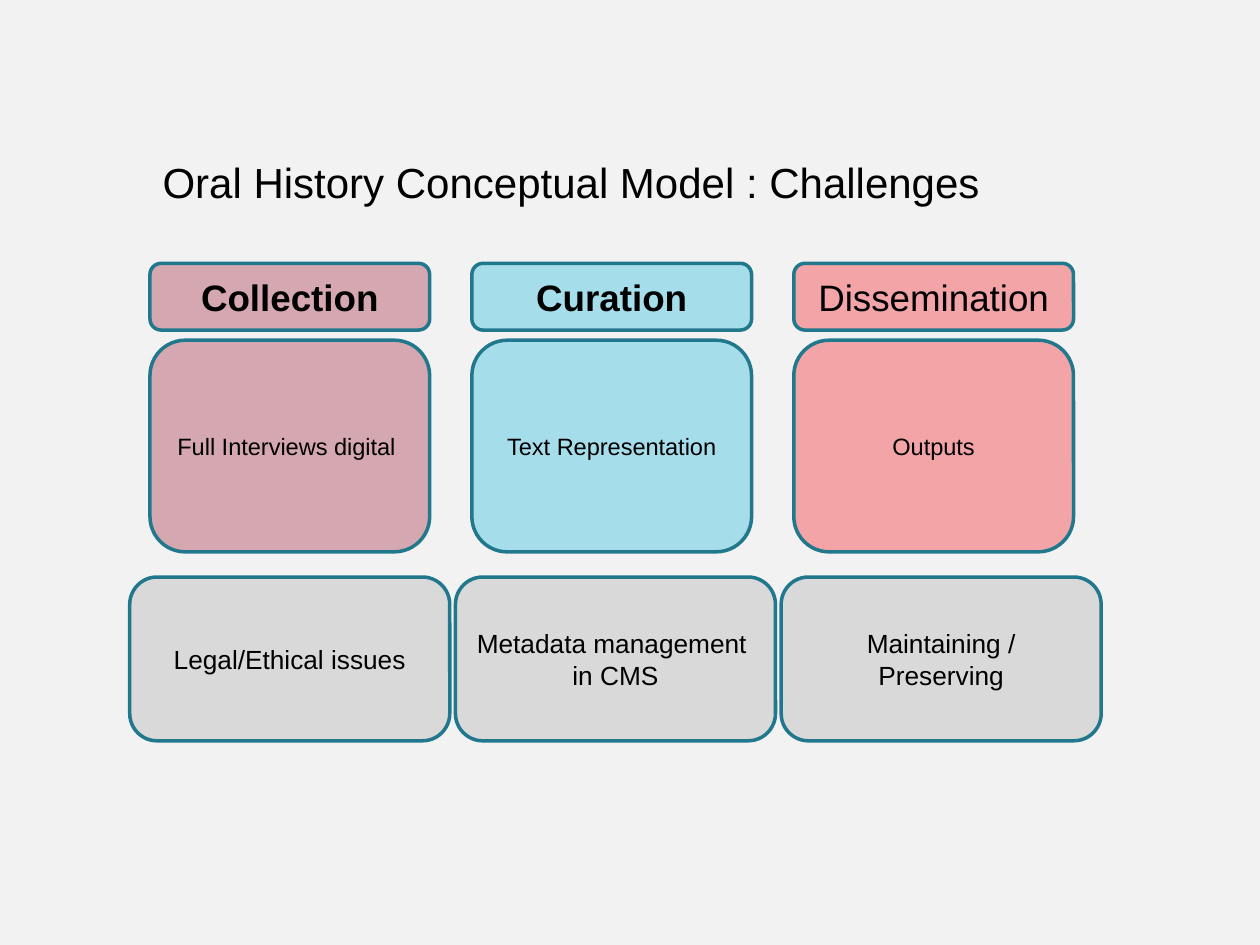
from dataclasses import dataclass

from pptx import Presentation, util as u
from pptx.dml.color import RGBColor
from pptx.enum import shapes, text


@dataclass(frozen=True)
class Theme:
    font: str = "Arial"
    background: str = "F2F2F2"
    ink: str = "000000"
    outline: str = "21788D"
    collection: str = "D5A7B1"
    curation: str = "A6DDEA"
    dissemination: str = "F2A4A7"
    challenge: str = "D9D9D9"
    title_size: float = 24
    heading_size: float = 21
    stage_size: float = 13.5
    challenge_size: float = 15
    line_width: float = 2


@dataclass(frozen=True)
class Row:
    left: float
    top: float
    width: float
    height: float
    gap: float

    def cell(self, column):
        return self.left + column * (self.width + self.gap), self.top, self.width, self.height


def write(shape, content, theme, size, bold=False, align=text.PP_ALIGN.CENTER,
          anchor=text.MSO_ANCHOR.MIDDLE):
    frame = shape.text_frame
    frame.text = content
    frame.word_wrap = True
    frame.auto_size = text.MSO_AUTO_SIZE.NONE
    frame.vertical_anchor = anchor
    for paragraph in frame.paragraphs:
        paragraph.alignment = align
        for run in paragraph.runs:
            run.font.name = theme.font
            run.font.size = u.Pt(size)
            run.font.bold = bold
            run.font.color.rgb = RGBColor.from_string(theme.ink)


class SlideBuilder:
    def __init__(self, presentation, theme):
        self.theme = theme
        self.slide = presentation.slides.add_slide(presentation.slide_layouts[5])
        fill = self.slide.background.fill
        fill.solid()
        fill.fore_color.rgb = RGBColor.from_string(theme.background)

    def title(self, content, row):
        shape = self.slide.shapes.title
        shape.left, shape.top, shape.width, shape.height = map(u.Inches, row.cell(0))
        write(shape, content, self.theme, self.theme.title_size,
              align=text.PP_ALIGN.LEFT, anchor=text.MSO_ANCHOR.TOP)

    def box(self, content, row, column, color, size, bold=False):
        shape = self.slide.shapes.add_shape(
            shapes.MSO_SHAPE.ROUNDED_RECTANGLE, *map(u.Inches, row.cell(column)))
        shape.shadow.inherit = False
        shape.fill.solid()
        shape.fill.fore_color.rgb = RGBColor.from_string(color)
        shape.line.color.rgb = RGBColor.from_string(self.theme.outline)
        shape.line.width = u.Pt(self.theme.line_width)
        write(shape, content, self.theme, size, bold)


def main():
    presentation = Presentation()
    presentation.slide_width, presentation.slide_height = u.Inches(10), u.Inches(7.5)
    theme = Theme()
    builder = SlideBuilder(presentation, theme)

    title_row = Row(1.19, 1.19, 7.55, 0.5, 0)
    heading_row = Row(1.19, 2.09, 2.22, 0.53, 0.335)
    stage_row = Row(1.19, 2.7, 2.22, 1.68, 0.335)
    challenge_row = Row(1.03, 4.58, 2.54, 1.3, 0.045)

    columns = [
        ("Collection", True, "Full Interviews digital ", "Legal/Ethical issues", theme.collection),
        ("Curation", True, "Text Representation", "Metadata management \nin CMS", theme.curation),
        ("Dissemination", False, "Outputs", "Maintaining / Preserving", theme.dissemination),
    ]

    builder.title("Oral History Conceptual Model : Challenges", title_row)
    for column, (heading, bold, stage, challenge, color) in enumerate(columns):
        builder.box(heading, heading_row, column, color, theme.heading_size, bold)
        builder.box(stage, stage_row, column, color, theme.stage_size)
        builder.box(challenge, challenge_row, column, theme.challenge, theme.challenge_size)

    presentation.save("out.pptx")


if __name__ == "__main__":
    main()
